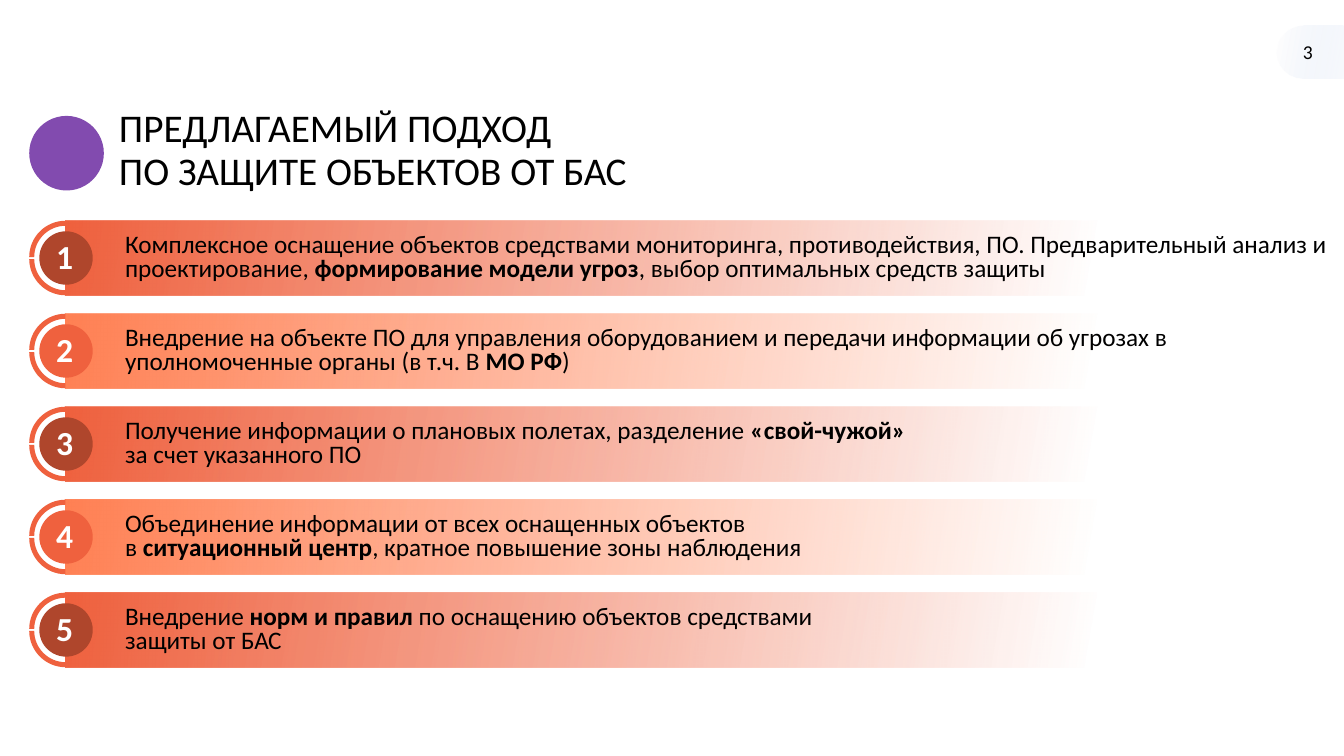
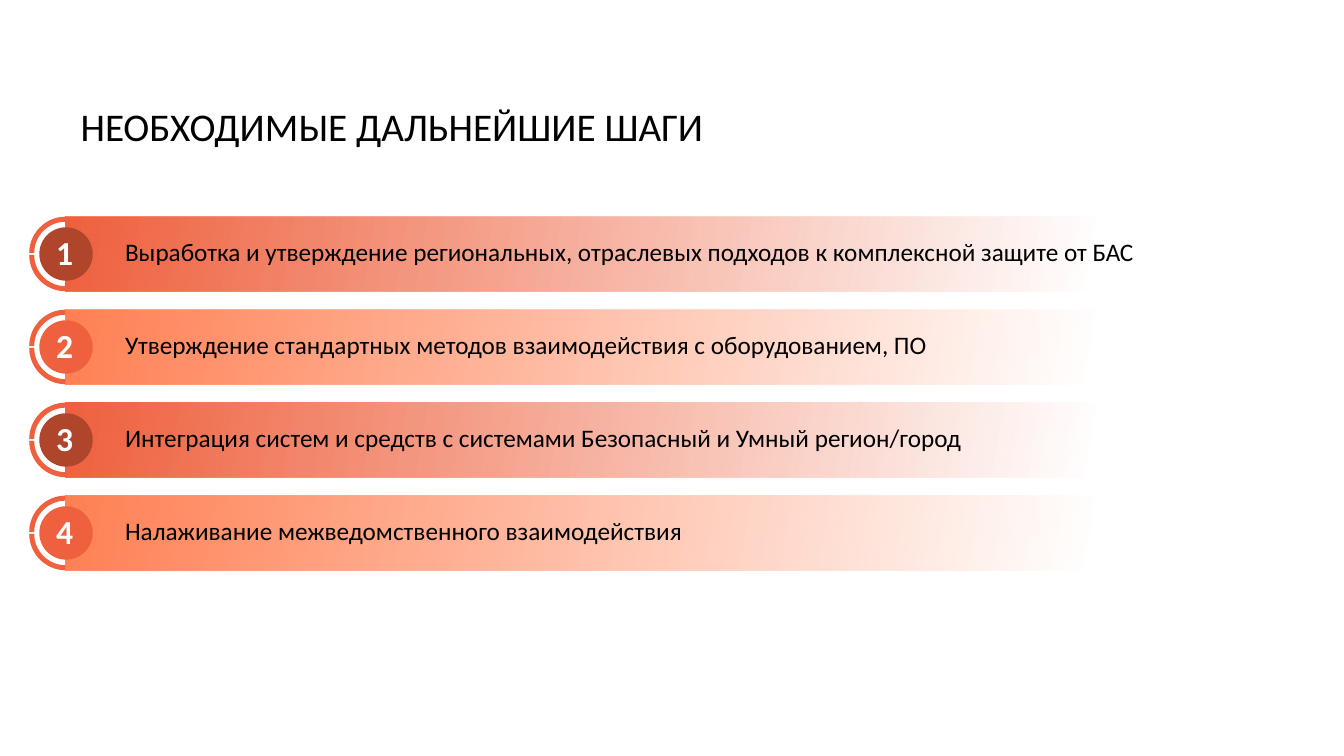
from dataclasses import dataclass

from lxml import etree
from pptx import Presentation
from pptx import util as u
from pptx.dml.color import RGBColor
from pptx.enum import shapes, text
from pptx.oxml.ns import qn


@dataclass(frozen=True)
class Theme:
    font: str = "Calibri"
    black: str = "000000"
    white: str = "FFFFFF"
    bar: tuple = ("EF613E", "FF8154")    # odd rows, even rows
    badge: tuple = ("AF462C", "EF613E")
    ring: str = "EF613E"
    tag: str = "D7E2F5"
    emblem: str = "824BAF"
    title_size: int = 28
    number_size: int = 24
    body_size: int = 18
    page_size: int = 14


THEME = Theme()
SLIDE_W, SLIDE_H = 13.33, 7.5
AXIS = 0.65                       # right edge of half rings and left edge of bars
BAR_H, ROW_PITCH = 0.74, 3.69 / 4
BADGE, BADGE_LEFT = 0.53, 0.39
NUMBER_LEFT, NUMBER_W, NUMBER_H = 0.46, 1.04, 0.28
RING_OUTER, RING_INNER, RING_GAP = 0.36, 0.31, 0.01
CURVE = 0.55                      # handle length of a quarter circle, as share of radius
TITLE_W, TITLE_H = 11.83, 0.36

# Words between ** marks are bold.
SLIDES = [
    {
        "title": "ПРЕДЛАГАЕМЫЙ ПОДХОД\nПО ЗАЩИТЕ ОБЪЕКТОВ ОТ БАС",
        "title_at": (1.08, 1.32),
        "first_row": 2.19,
        "emblem": True,
        "page": "3",
        "rows": [
            "Комплексное оснащение объектов средствами мониторинга, противодействия, ПО. "
            "Предварительный анализ и проектирование, **формирование модели угроз**, "
            "выбор оптимальных средств защиты",
            "Внедрение на объекте ПО для управления оборудованием и передачи информации "
            "об угрозах в уполномоченные органы (в т.ч. В **МО РФ**)",
            "Получение информации о плановых полетах, разделение **«свой-чужой»**\n"
            "за счет указанного ПО",
            "Объединение информации от всех оснащенных объектов\n"
            "в **ситуационный центр**, кратное повышение зоны наблюдения",
            "Внедрение **норм и правил** по оснащению объектов средствами\nзащиты от БАС",
        ],
    },
    {
        "title": "НЕОБХОДИМЫЕ ДАЛЬНЕЙШИЕ ШАГИ",
        "title_at": (0.7, 1.1),
        "first_row": 2.15,
        "rows": [
            "Выработка и утверждение региональных, отраслевых подходов "
            "к комплексной защите от БАС",
            "Утверждение стандартных методов взаимодействия с оборудованием, ПО",
            "Интеграция систем и средств с системами Безопасный и Умный регион/город",
            "Налаживание межведомственного взаимодействия",
        ],
    },
]


def inches(*lengths):
    return [u.Inches(length) for length in lengths]


def write(box, content, size, color=THEME.black, bold=False, align="LEFT",
          spacing=None, insets=(0.1, 0.05, 0.1, 0.05)):
    """Fill box with one paragraph; ** toggles bold and a newline breaks the line."""
    frame = box.text_frame
    frame.word_wrap = True
    frame.auto_size = text.MSO_AUTO_SIZE.NONE
    frame.vertical_anchor = text.MSO_ANCHOR.MIDDLE
    (frame.margin_left, frame.margin_top,
     frame.margin_right, frame.margin_bottom) = inches(*insets)
    para = frame.paragraphs[0]
    para.alignment = getattr(text.PP_ALIGN, align)
    if spacing:
        para.line_spacing = spacing
    for part_index, part in enumerate(content.split("**")):
        for line_index, line in enumerate(part.split("\n")):
            if line_index:
                para.add_line_break()
            if line:
                span = para.add_run()
                span.text = line
                span.font.name = THEME.font
                span.font.size = u.Pt(size)
                span.font.bold = bold or part_index % 2 == 1
                span.font.color.rgb = RGBColor.from_string(color)


def paint(shape, color):
    shape.shadow.inherit = False
    shape.line.fill.background()
    shape.fill.solid()
    shape.fill.fore_color.rgb = RGBColor.from_string(color)


def paint_fade(shape, start, end, end_at):
    """Gradient from solid start to fully transparent end, tilted 10° clockwise."""
    shape.shadow.inherit = False
    shape.line.fill.background()
    shape.fill.gradient()
    shape.fill.gradient_angle = 350
    for stop, color, position in zip(shape.fill.gradient_stops, (start, end), (0, end_at)):
        stop.color.rgb = RGBColor.from_string(color)
        stop.position = position
    last = shape.element.spPr.findall(".//" + qn("a:srgbClr"))[-1]
    etree.SubElement(last, qn("a:alpha")).set("val", "0")


def add_shape(page, kind, left, top, width, height):
    return page.shapes.add_shape(getattr(shapes.MSO_SHAPE, kind),
                                 *inches(left, top, width, height))


def bend(lines):
    """Turn three line segments into one curve: two handles and an end point."""
    curve = etree.Element(qn("a:cubicBezTo"))
    lines[0].addprevious(curve)
    for line in lines:
        curve.append(line[0])
        line.getparent().remove(line)


def add_half_ring(page, middle):
    """Two quarter rings left of the axis, parted by a thin gap."""
    def quarter(side):
        def arc(radius):
            return [(radius * across, radius * along)
                    for across, along in ((0, 1), (CURVE, 1), (1, CURVE), (1, 0))]

        outline = arc(RING_INNER) + arc(RING_OUTER)[::-1]
        return [tuple(inches(AXIS - across, middle + side * (RING_GAP + along)))
                for across, along in outline]

    upper, lower = quarter(-1), quarter(1)
    builder = page.shapes.build_freeform(*upper[0])
    builder.add_line_segments(upper[1:], close=True)
    builder.move_to(*lower[0])
    builder.add_line_segments(lower[1:], close=True)
    ring = builder.convert_to_shape()
    lines = ring.element.spPr.findall(".//" + qn("a:lnTo"))
    for first in (0, 4, 7, 11):       # each quarter: inner arc, one line, outer arc
        bend(lines[first:first + 3])
    paint(ring, THEME.ring)


def add_row(page, index, top, content):
    middle = top + BAR_H / 2
    bar = add_shape(page, "RECTANGLE", AXIS, top, SLIDE_W - AXIS, BAR_H)
    color = THEME.bar[index % 2]
    paint_fade(bar, color, color, 0.8)
    write(bar, content, THEME.body_size, spacing=0.8, insets=(0.59, 0.01, 0, 0))

    add_half_ring(page, middle)
    badge = add_shape(page, "OVAL", BADGE_LEFT, middle - BADGE / 2, BADGE, BADGE)
    paint(badge, THEME.badge[index % 2])
    number = page.shapes.add_textbox(
        *inches(NUMBER_LEFT, middle - 0.16, NUMBER_W, NUMBER_H))
    write(number, str(index + 1), THEME.number_size, color=THEME.white, bold=True)


def add_page_tag(page, number):
    tag = add_shape(page, "ROUNDED_RECTANGLE", 12.66, 0.25, 0.92, BADGE)
    tag.adjustments[0] = 0.5
    paint_fade(tag, THEME.white, THEME.tag, 1)
    label = page.shapes.add_textbox(*inches(12.55, 0.33, 0.57, 0.37))
    write(label, number, THEME.page_size, align="RIGHT")


def build_slide(deck, content):
    page = deck.slides.add_slide(deck.slide_layouts[5])
    title = page.shapes.title
    title.left, title.top, title.width, title.height = inches(
        *content["title_at"], TITLE_W, TITLE_H)
    write(title, content["title"], THEME.title_size, spacing=0.9)
    if content.get("emblem"):
        paint(add_shape(page, "OVAL", 0.29, 1.15, 0.74, 0.74), THEME.emblem)
    if "page" in content:
        add_page_tag(page, content["page"])
    for index, row in enumerate(content["rows"]):
        add_row(page, index, content["first_row"] + index * ROW_PITCH, row)


def main():
    deck = Presentation()
    deck.slide_width, deck.slide_height = inches(SLIDE_W, SLIDE_H)
    for content in SLIDES:
        build_slide(deck, content)
    deck.save("out.pptx")


if __name__ == "__main__":
    main()
